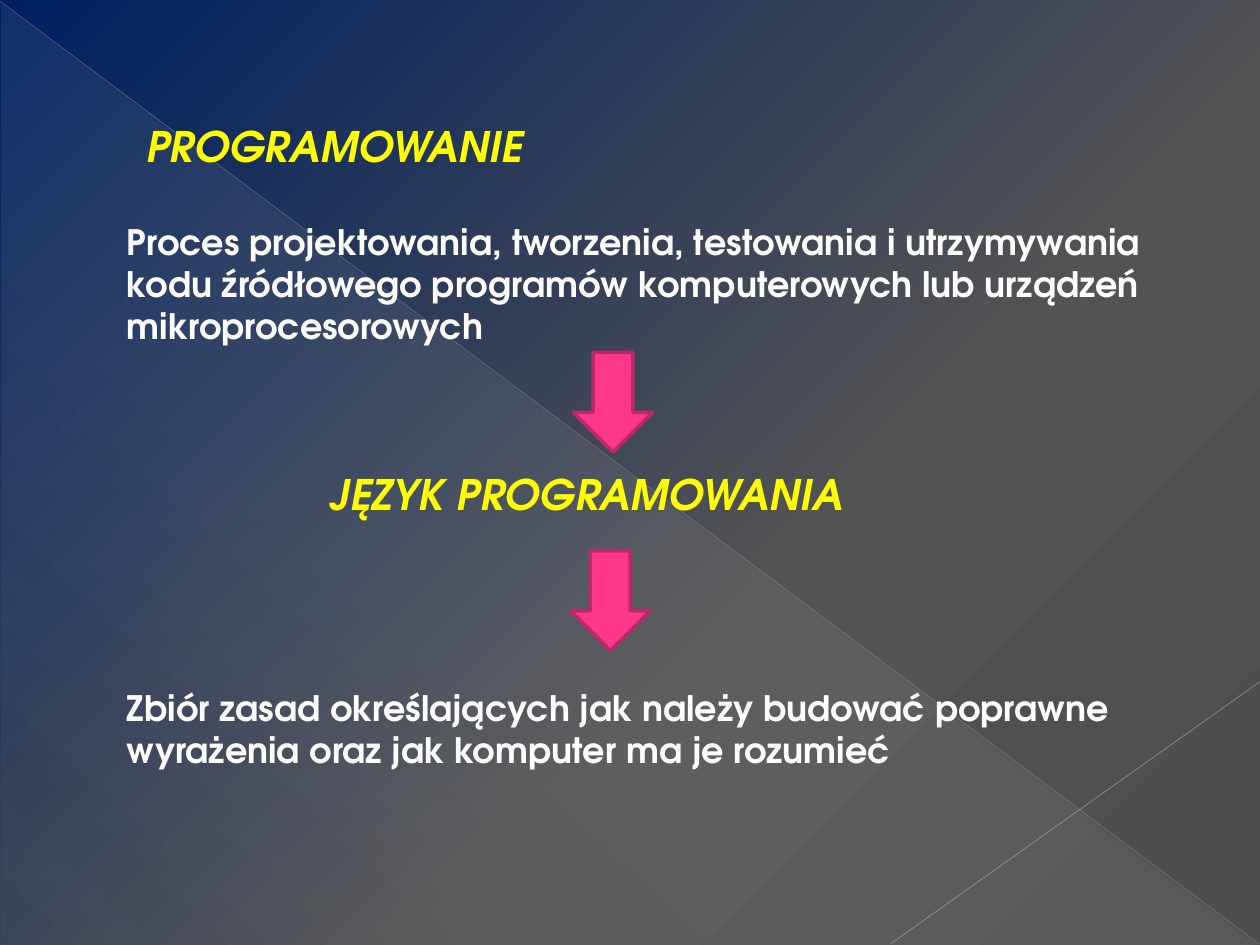
from dataclasses import dataclass

from lxml import etree
from pptx import Presentation
from pptx.dml.color import RGBColor
from pptx.enum import shapes, text
from pptx.oxml import ns
from pptx.util import Pt


@dataclass(frozen=True)
class Theme:
    font: str = "TeX Gyre Adventor"
    heading: str = "FFFF00"
    body: str = "FFFFFF"
    arrow: str = "FF388C"
    arrow_edge: str = "BD2968"
    heading_size: int = 24
    body_size: int = 20
    # Gradient stops: position %, colour, opacity %
    backdrop: tuple = ((0, "002060", 100), (62, "535353", 100), (100, "4D4D4D", 100))
    veil: tuple = ((0, "D2D2D2", 10), (70, "D2D2D2", 8), (100, "D2D2D2", 1))


THEME = Theme()


def add_alpha(color, percent):
    etree.SubElement(color, ns.qn("a:alpha")).set("val", str(percent * 1000))


def set_gradient(holder, stops, angle):
    """Replace the solid fill of holder by a linear gradient, angle clockwise."""
    gradient = etree.Element(ns.qn("a:gradFill"), rotWithShape="1")
    stop_list = etree.SubElement(gradient, ns.qn("a:gsLst"))
    for position, color, opacity in stops:
        stop = etree.SubElement(stop_list, ns.qn("a:gs"), pos=str(position * 1000))
        add_alpha(etree.SubElement(stop, ns.qn("a:srgbClr"), val=color), opacity)
    etree.SubElement(gradient, ns.qn("a:lin"), ang=str(angle * 60000), scaled="0")
    holder.replace(holder.find(ns.qn("a:solidFill")), gradient)


def add_hairline(page, start, end, color, width, opacity):
    line = page.shapes.add_connector(
        shapes.MSO_CONNECTOR.STRAIGHT, *(Pt(value) for value in (*start, *end)))
    line.line.width = Pt(width)
    line.line.color.rgb = RGBColor.from_string(color)
    properties = line.element.spPr
    add_alpha(properties.find(".//" + ns.qn("a:srgbClr")), opacity)
    etree.SubElement(properties, ns.qn("a:effectLst"))


def add_backdrop(page, width, height):
    page.background.fill.solid()
    set_gradient(page.element.find(".//" + ns.qn("p:bgPr")), THEME.backdrop, 45)
    veil = page.shapes.add_shape(
        shapes.MSO_SHAPE.RIGHT_TRIANGLE, Pt(0.7), Pt(1.4), Pt(width - 1.4), Pt(height - 1.4))
    veil.shadow.inherit = False
    veil.line.fill.background()
    veil.fill.solid()
    set_gradient(veil.element.spPr, THEME.veil, 133)
    add_hairline(page, (0, 0.7), (width - 0.7, height - 0.7), "BFBFBF", 0.39, 35)
    add_hairline(page, (width, 389.5), (509, height - 0.7), "C6C6C6", 0.47, 45)


def add_text(page, words, left, top, width, height, *, size, color, italic=False):
    box = page.shapes.add_textbox(Pt(left), Pt(top), Pt(width), Pt(height))
    box.text_frame.word_wrap = True
    box.text_frame.auto_size = text.MSO_AUTO_SIZE.SHAPE_TO_FIT_TEXT
    span = box.text_frame.paragraphs[0].add_run()
    span.text = words
    span.font.name = THEME.font
    span.font.size = Pt(size)
    span.font.bold = True
    span.font.italic = italic
    span.font.color.rgb = RGBColor.from_string(color)


def add_heading(page, words, left, top, width):
    add_text(page, words, left, top, width, 36,
             size=THEME.heading_size, color=THEME.heading, italic=True)


def add_definition(page, words, top, height):
    add_text(page, words, 65.5, top, 612, height, size=THEME.body_size, color=THEME.body)


def add_down_arrow(page, left, top):
    arrow = page.shapes.add_shape(
        shapes.MSO_SHAPE.DOWN_ARROW, Pt(left), Pt(top), Pt(45.4), Pt(57))
    arrow.shadow.inherit = False
    arrow.fill.solid()
    arrow.fill.fore_color.rgb = RGBColor.from_string(THEME.arrow)
    arrow.line.color.rgb = RGBColor.from_string(THEME.arrow_edge)
    arrow.line.width = Pt(2)


def main():
    width, height = 720, 540
    deck = Presentation()
    deck.slide_width, deck.slide_height = Pt(width), Pt(height)
    page = deck.slides.add_slide(deck.slide_layouts[6])
    add_backdrop(page, width, height)
    add_heading(page, "PROGRAMOWANIE", 76.5, 65.5, 278)
    add_definition(page, "Proces projektowania, tworzenia, testowania i utrzymywania kodu "
                   "źródłowego programów komputerowych lub urządzeń mikroprocesorowych", 122.4, 80)
    add_down_arrow(page, 327.6, 201.4)
    add_heading(page, "JĘZYK PROGRAMOWANIA", 181.4, 264.2, 337.7)
    add_down_arrow(page, 326, 314.8)
    add_definition(page, "Zbiór zasad określających jak należy budować poprawne wyrażenia "
                   "oraz jak komputer ma je rozumieć", 389, 55.5)
    deck.save("out.pptx")


if __name__ == "__main__":
    main()
